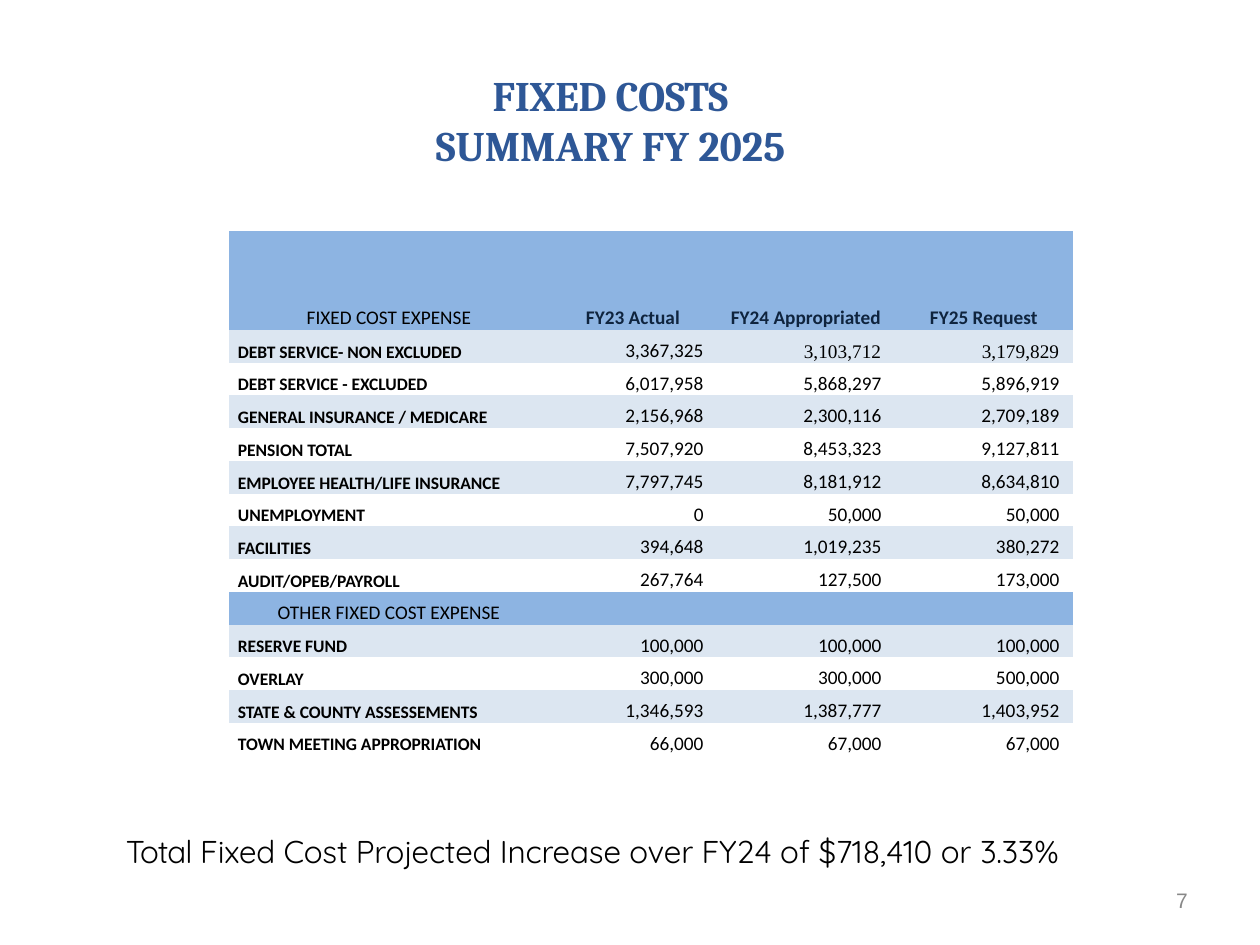
import pptx
import pptx.dml.color
import pptx.enum.text
import pptx.util
from dataclasses import dataclass

ALIGN = pptx.enum.text.PP_ALIGN
ANCHOR = pptx.enum.text.MSO_ANCHOR
PIXELS_PER_INCH = 126
NO_STYLE = "{2D5ABB26-0587-4C30-8999-92F81FD0307C}"


@dataclass(frozen=True)
class Theme:
    title_color: str = "2E5796"
    text_color: str = "000000"
    heading_color: str = "0F243E"
    muted_color: str = "888888"
    header_fill: str = "8DB4E2"
    band_fill: str = "DCE6F1"
    title_size: int = 24
    caption_size: int = 18
    number_size: int = 12
    cell_size: int = 11
    label_size: int = 10


theme = Theme()


def px(length):
    return pptx.util.Inches(length / PIXELS_PER_INCH)


def write(frame, runs, font="Calibri", size=theme.cell_size, color=theme.text_color,
          bold=False, align=ALIGN.LEFT, line_spacing=None):
    """Fill the first paragraph with a text or with (text, letter spacing) runs."""
    paragraph = frame.paragraphs[0]
    paragraph.alignment = align
    paragraph.line_spacing = line_spacing
    if not runs:
        paragraph._p.get_or_add_endParaRPr().set("sz", str(size * 100))
        return
    for text, spacing in [(runs, 0)] if isinstance(runs, str) else runs:
        for index, line in enumerate(text.split("\n")):
            if index:
                paragraph.add_line_break()
            run = paragraph.add_run()
            run.text = line
            run.font.name = font
            run.font.size = pptx.util.Pt(size)
            run.font.bold = bold
            run.font.color.rgb = pptx.dml.color.RGBColor.from_string(color)
            if spacing:
                run._r.get_or_add_rPr().set("spc", str(round(spacing * 100)))


presentation = pptx.Presentation()
presentation.slide_width = pptx.util.Inches(10)
presentation.slide_height = pptx.util.Inches(7.5)
slide = presentation.slides.add_slide(presentation.slide_layouts[5])

# Title, closing statement and page number
title = slide.shapes.title
caption = slide.shapes.add_textbox(0, 0, 0, 0)
page_number = slide.shapes.add_textbox(0, 0, 0, 0)
for shape, left, top, width, height in (
    (title, 399, 68, 423, 103),
    (caption, 126, 822, 1121, 93),
    (page_number, 1176, 888, 34, 26),
):
    shape.left, shape.top, shape.width, shape.height = map(px, (left, top, width, height))
    frame = shape.text_frame
    frame.word_wrap = True
    frame.auto_size = pptx.enum.text.MSO_AUTO_SIZE.SHAPE_TO_FIT_TEXT
    frame.vertical_anchor = ANCHOR.TOP
    frame.margin_left = frame.margin_right = frame.margin_top = frame.margin_bottom = 0
title.text_frame.margin_top = px(1)

write(title.text_frame, [("FIXED ", -0.1), ("COSTS\nSUMMARY FY 2025", 0)],
      font="Cambria", size=theme.title_size, color=theme.title_color, bold=True,
      align=ALIGN.CENTER)
write(caption.text_frame,
      [("Total ", -0.6), ("Fixed Cost Projected Increase over FY24 ", -0.1), ("of ", 0),
       ("$718,410 ", -0.1), ("or ", 0), ("3.33%", -0.1)],
      font="Quicksand", size=theme.caption_size, line_spacing=pptx.util.Pt(27.6))
write(page_number.text_frame, "7", font="Arial", size=theme.number_size,
      color=theme.muted_color)

# Cost table: section rows hold text or blanks, cost rows hold numbers
rows = [
    ("FIXED COST EXPENSE", "FY23 Actual", "FY24 Appropriated", "FY25 Request"),
    ("DEBT SERVICE- NON EXCLUDED", 3367325, 3103712, 3179829),
    ("DEBT SERVICE - EXCLUDED", 6017958, 5868297, 5896919),
    ("GENERAL INSURANCE / MEDICARE", 2156968, 2300116, 2709189),
    ("PENSION TOTAL", 7507920, 8453323, 9127811),
    ("EMPLOYEE HEALTH/LIFE INSURANCE", 7797745, 8181912, 8634810),
    ("UNEMPLOYMENT", 0, 50000, 50000),
    ("FACILITIES", 394648, 1019235, 380272),
    ("AUDIT/OPEB/PAYROLL", 267764, 127500, 173000),
    ("OTHER FIXED COST EXPENSE", "", "", ""),
    ("RESERVE FUND", 100000, 100000, 100000),
    ("OVERLAY", 300000, 300000, 500000),
    ("STATE & COUNTY ASSESSEMENTS", 1346593, 1387777, 1403952),
    ("TOWN MEETING APPROPRIATION", 66000, 67000, 67000),
]
column_widths = [320, 168, 178, 178]
header_height, body_height = 99, 426
table_frame = slide.shapes.add_table(
    len(rows), len(column_widths), px(229), px(231),
    px(sum(column_widths)), px(header_height + body_height))
table = table_frame.table
table.first_row = table.horz_banding = False
table._tbl.tblPr.find(pptx.oxml.ns.qn("a:tableStyleId")).text = NO_STYLE
for column, width in zip(table.columns, column_widths):
    column.width = px(width)

banded = False
for row_index, values in enumerate(rows):
    is_section = isinstance(values[1], str)
    banded = not is_section and not banded
    fill_color = theme.header_fill if is_section else theme.band_fill if banded else None
    table.rows[row_index].height = px(
        body_height / (len(rows) - 1) if row_index else header_height)
    for column_index, value in enumerate(values):
        cell = table.cell(row_index, column_index)
        cell.vertical_anchor = ANCHOR.BOTTOM
        cell.margin_left = cell.margin_right = px(9)
        cell.margin_top = cell.margin_bottom = 0
        if fill_color:
            cell.fill.solid()
            cell.fill.fore_color.rgb = pptx.dml.color.RGBColor.from_string(fill_color)
        else:
            cell.fill.background()

        if is_section:
            style = {"align": ALIGN.CENTER}
            if column_index:
                style.update(color=theme.heading_color, bold=True)
        elif column_index == 0:
            style = {"size": theme.label_size, "bold": True}
        else:
            value = f"{value:,} "
            style = {"align": ALIGN.RIGHT}
            if row_index == 1 and column_index > 1:
                style["font"] = "Times New Roman"
        write(cell.text_frame, value, line_spacing=1.07, **style)

presentation.save("out.pptx")
